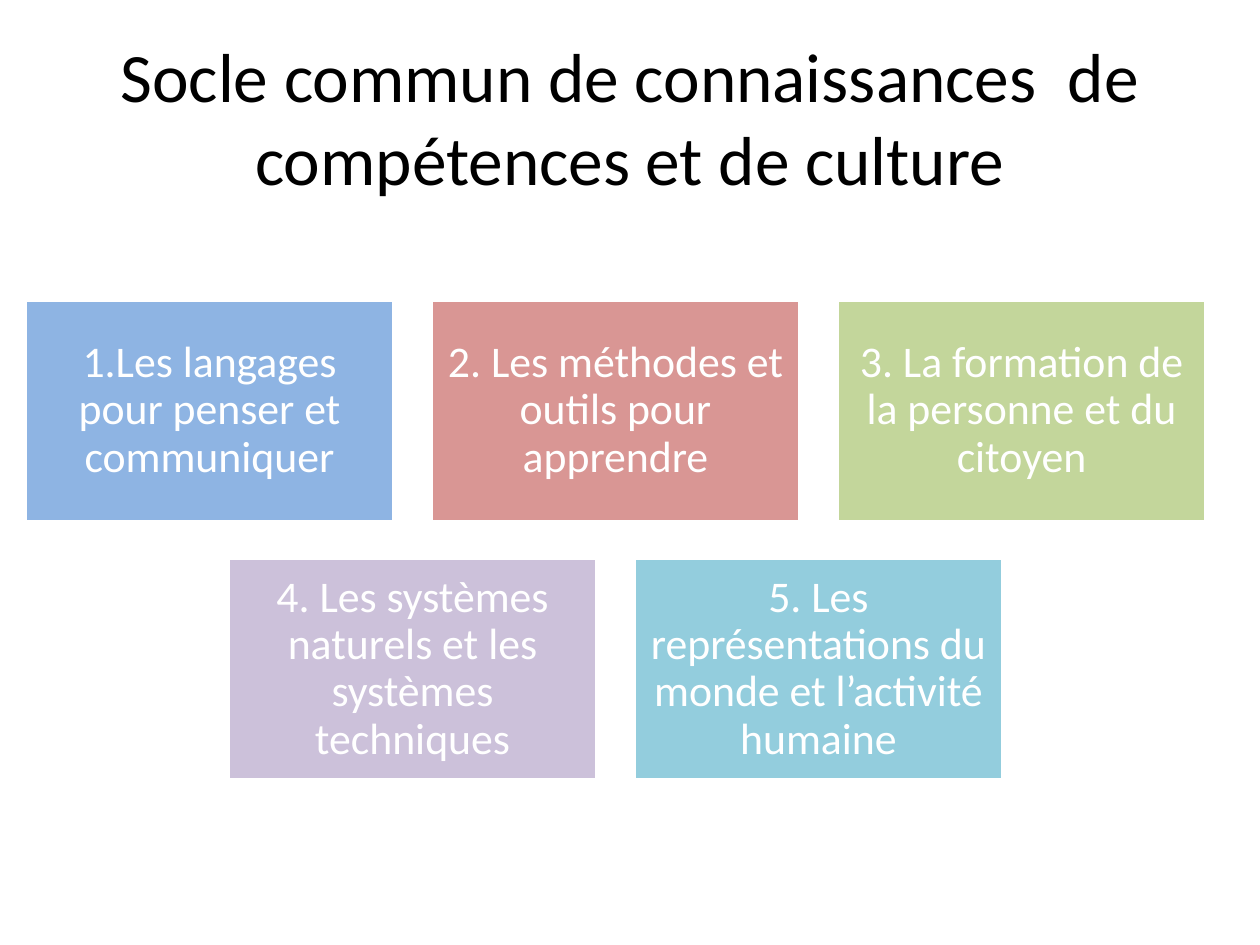
from pptx import Presentation
from pptx.dml.color import RGBColor
from pptx.enum.shapes import MSO_SHAPE
from pptx.enum.text import MSO_ANCHOR, PP_ALIGN
from pptx.util import Pt

BLACK = RGBColor(0x00, 0x00, 0x00)
WHITE = RGBColor(0xFF, 0xFF, 0xFF)
BLUE = RGBColor(0x8E, 0xB4, 0xE3)
RED = RGBColor(0xD9, 0x96, 0x94)
GREEN = RGBColor(0xC3, 0xD6, 0x9B)
PURPLE = RGBColor(0xCC, 0xC1, 0xDA)
AQUA = RGBColor(0x93, 0xCD, 0xDD)

FONT = "Calibri"
BOX_W, BOX_H, GAP = 210.9, 126.6, 21.1
ROWS_CENTER, ROWS_TOP = 351.7, 171.4

TITLE = "Socle commun de connaissances  de compétences et de culture"
ROWS = [
    [("1.Les langages pour penser et communiquer", BLUE),
     ("2. Les méthodes et outils pour apprendre", RED),
     ("3. La formation de la personne et du citoyen", GREEN)],
    [("4. Les systèmes naturels et les systèmes techniques", PURPLE),
     ("5. Les représentations du monde et l’activité humaine", AQUA)],
]


def write_centered(tf, text, size, color):
    tf.word_wrap = True
    tf.vertical_anchor = MSO_ANCHOR.MIDDLE
    p = tf.paragraphs[0]
    p.alignment = PP_ALIGN.CENTER
    r = p.add_run()
    r.text = text
    r.font.name = FONT
    r.font.size = Pt(size)
    r.font.color.rgb = color
    return p


def add_title(slide, text):
    sp = slide.shapes.title
    sp.left, sp.top, sp.width, sp.height = Pt(36), Pt(21.6), Pt(648), Pt(90)
    write_centered(sp.text_frame, text, 39.6, BLACK)


def add_domain_box(slide, left, top, text, fill):
    sp = slide.shapes.add_shape(
        MSO_SHAPE.RECTANGLE, Pt(left), Pt(top), Pt(BOX_W), Pt(BOX_H))
    sp.shadow.inherit = False
    sp.fill.solid()
    sp.fill.fore_color.rgb = fill
    sp.line.color.rgb = WHITE
    sp.line.width = Pt(2)
    tf = sp.text_frame
    tf.margin_left = tf.margin_right = Pt(7.5)
    tf.margin_top = tf.margin_bottom = Pt(7.5)
    p = write_centered(tf, text, 25, WHITE)
    p.line_spacing = 0.9


def add_domain_rows(slide, rows):
    """Stack rows of boxes, each row centred on the same axis."""
    for i, row in enumerate(rows):
        row_w = len(row) * (BOX_W + GAP) - GAP
        left = ROWS_CENTER - row_w / 2
        top = ROWS_TOP + i * (BOX_H + GAP)
        for j, (text, fill) in enumerate(row):
            add_domain_box(slide, left + j * (BOX_W + GAP), top, text, fill)


def main():
    prs = Presentation()
    prs.slide_width, prs.slide_height = Pt(720), Pt(540)
    slide = prs.slides.add_slide(prs.slide_layouts[5])
    add_title(slide, TITLE)
    add_domain_rows(slide, ROWS)
    prs.save("out.pptx")


if __name__ == "__main__":
    main()
